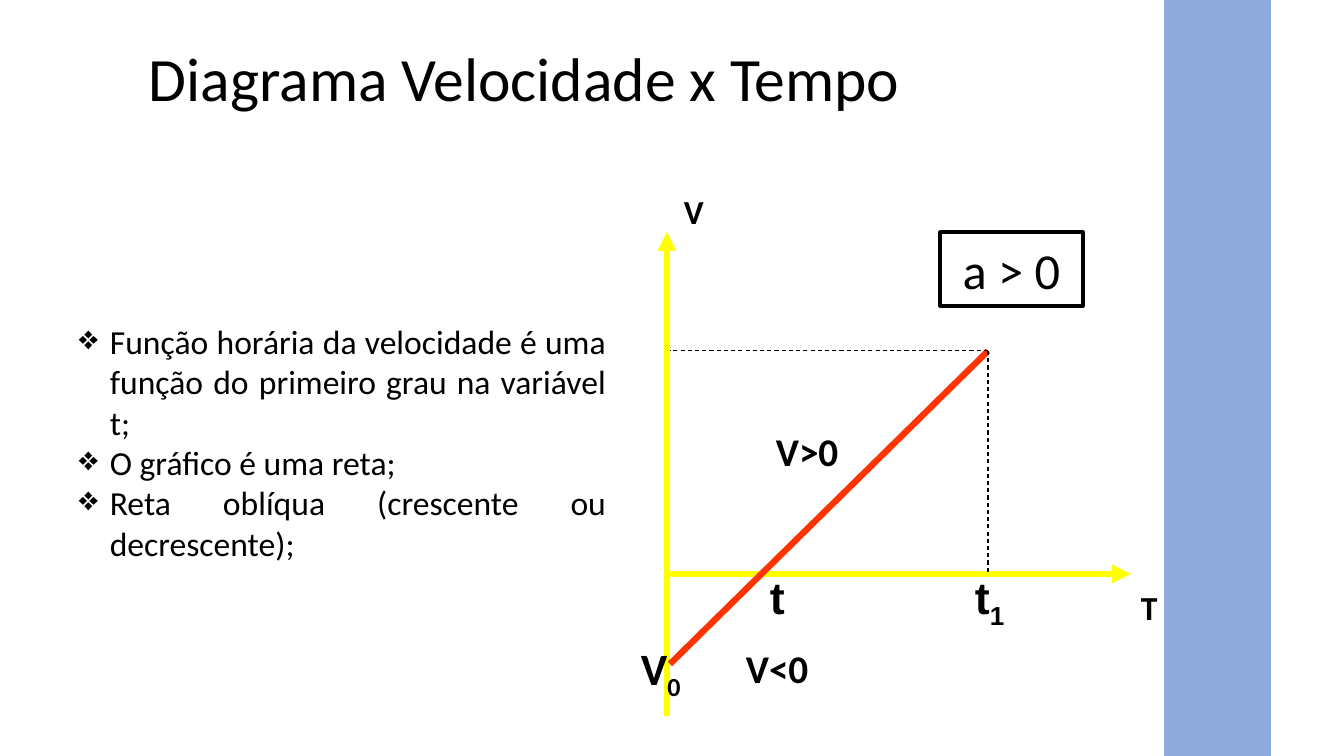
from pptx import Presentation, util as u
from pptx.dml.color import RGBColor
from pptx.enum import dml, shapes, text
from pptx.oxml.ns import qn
from lxml import etree

PX = 914400 / 100.8
HUES = {"ink": "000000", "axis": "FFFF00", "graph": "FF3300", "bar": "8FAADC"}


def emu(*vals):
    """Turn px lengths into EMU."""
    return [u.Emu(round(v * PX)) for v in vals]


def hue(name):
    """Look up a colour by name."""
    return RGBColor.from_string(HUES[name])


def write(para, runs, size, bold=False, font="Calibri"):
    """Add runs to a paragraph; a leading underscore marks a subscript."""
    for part in runs:
        run = para.add_run()
        run.text = part.lstrip("_")
        run.font.size, run.font.bold, run.font.name = u.Pt(size), bold, font
        run.font.color.rgb = hue("ink")
        if part.startswith("_"):
            run.font._element.set("baseline", "-25000")


def label(slide, box, runs, size, bold=True, font="Calibri"):
    """Place a text box and return its frame."""
    frame = slide.shapes.add_textbox(*emu(*box)).text_frame
    frame.word_wrap = True
    write(frame.paragraphs[0], runs, size, bold, font)
    return frame


def line(slide, ends, name, width, dash=False, arrow=False):
    """Draw a straight line, dashed or with an arrowhead if asked."""
    link = slide.shapes.add_connector(shapes.MSO_CONNECTOR.STRAIGHT, *emu(*ends))
    link.line.color.rgb, link.line.width = hue(name), u.Pt(width)
    if dash:
        link.line.dash_style = dml.MSO_LINE.DASH
    if arrow:
        etree.SubElement(link.line._get_or_add_ln(), qn("a:tailEnd"), type="triangle")
    etree.SubElement(link._element.spPr, qn("a:effectLst"))


def block(slide, box, name, width, fill=None):
    """Draw a plain rectangle."""
    rect = slide.shapes.add_shape(shapes.MSO_SHAPE.RECTANGLE, *emu(*box))
    rect.shadow.inherit = False
    rect.line.color.rgb, rect.line.width = hue(name), u.Pt(width)
    if fill:
        rect.fill.solid()
        rect.fill.fore_color.rgb = hue(fill)
    else:
        rect.fill.background()
    return rect


def title(slide, box):
    """Place the slide title."""
    frame = label(slide, box, ["Diagrama Velocidade x Tempo"], 44, False)
    frame.vertical_anchor = text.MSO_ANCHOR.MIDDLE
    frame.paragraphs[0].line_spacing = 0.9


def graph(slide, box):
    """Draw the velocity and time graph inside its box."""
    x, y, w, h = box
    zero, top, right = y + 342, y + 119, x + 321
    line(slide, (x, zero, x + w, zero), "axis", 4.5, arrow=True)
    line(slide, (x, y + h, x, y), "axis", 4.5, arrow=True)
    line(slide, (x + 3, y + 432, right, top), "graph", 4.5)
    line(slide, (right, top, right, zero), "ink", 0.75, dash=True)
    line(slide, (right, top, x + 3, top), "ink", 0.75, dash=True)
    for dx, dy, wide, high, runs, size, font in (
        (7, -46, 72, 50, ["V"], 24, "Calibri"),
        (w, 350, 88, 50, ["T"], 24, "Calibri"),
        (-36, 404, 80, 64, ["V", "_0"], 32, "Calibri"),
        (69, 407, 135, 57, ["V<0"], 28, "Calibri"),
        (99, 190, 135, 57, ["V>0"], 28, "Calibri"),
        (93, 333, 64, 64, ["t"], 32, "Arial"),
        (298, 333, 64, 64, ["t", "_1"], 32, "Arial"),
    ):
        label(slide, (x + dx, y + dy, wide, high), runs, size, font=font)
    sign = block(slide, (x + 273, y, 143, 74), "ink", 2.25)
    para = sign.text_frame.paragraphs[0]
    para.alignment = text.PP_ALIGN.CENTER
    write(para, ["a > 0"], 36)


def notes(slide, box):
    """Place the bulleted remarks."""
    frame = slide.shapes.add_textbox(*emu(*box)).text_frame
    frame.word_wrap = True
    for i, item in enumerate((
        "Função horária da velocidade é uma função do primeiro grau na variável t;",
        "O gráfico é uma reta;",
        "Reta oblíqua (crescente ou decrescente);",
    )):
        para = frame.add_paragraph() if i else frame.paragraphs[0]
        para.alignment = text.PP_ALIGN.JUSTIFY
        props = para._p.get_or_add_pPr()
        indent = emu(31)[0]
        props.set("marL", str(indent))
        props.set("indent", str(-indent))
        etree.SubElement(props, qn("a:buChar"), char="❖")
        write(para, [item], 24)


def band(slide, box):
    """Draw the side band as a bar turned upright."""
    x, y, w, h = box
    bar = block(slide, (x + (w - h) / 2, y + (h - w) / 2, h, w), "bar", 1, "bar")
    bar.rotation = 270


def main():
    """Build the slide and save it."""
    deck = Presentation()
    deck.slide_width, deck.slide_height = emu(1344, 756)
    slide = deck.slides.add_slide(deck.slide_layouts[6])
    title(slide, (139, 9, 1068, 146))
    graph(slide, (667, 232, 464, 484))
    notes(slide, (69, 316, 547, 316))
    band(slide, (1165, 0, 105, 756))
    deck.save("out.pptx")


if __name__ == "__main__":
    main()
